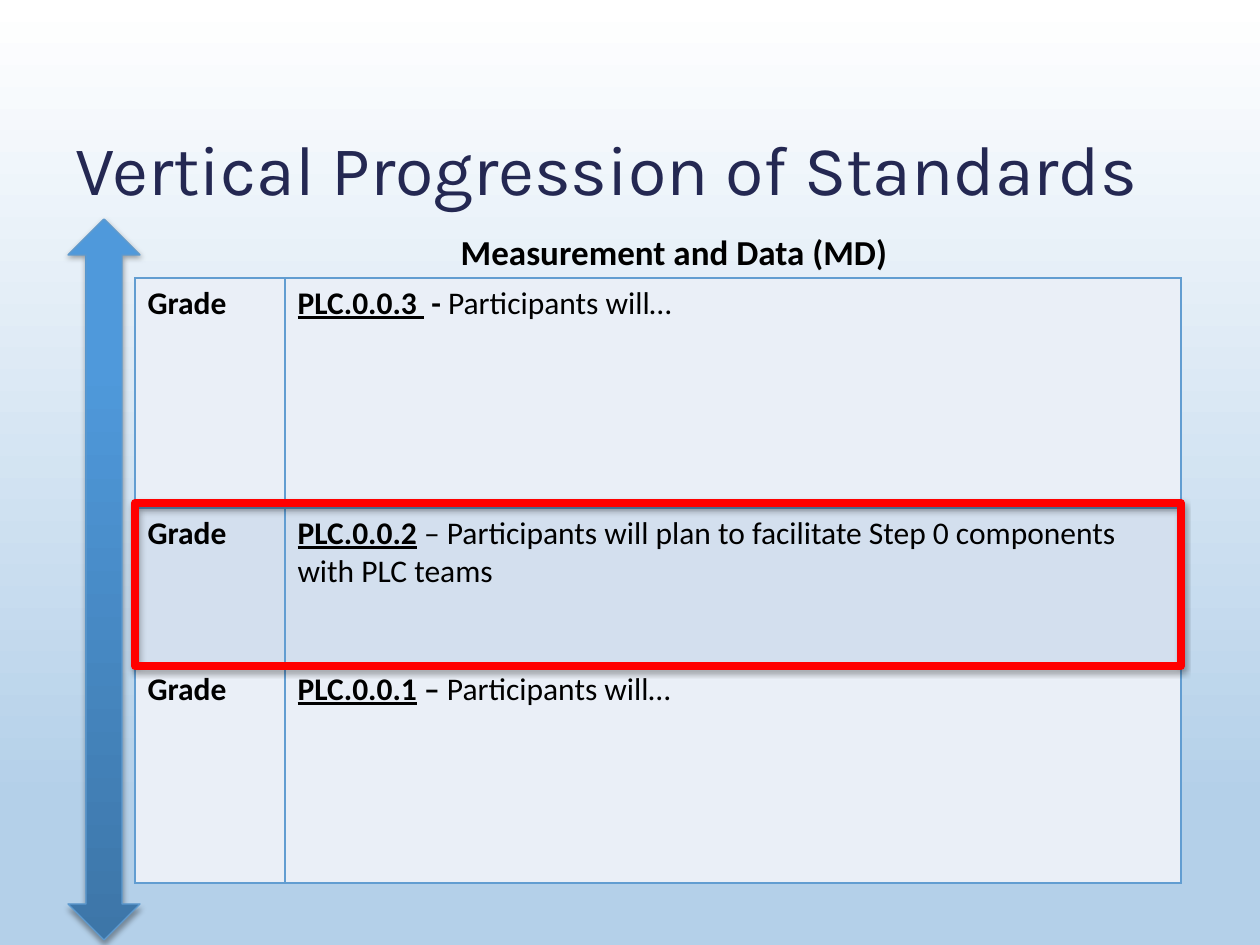
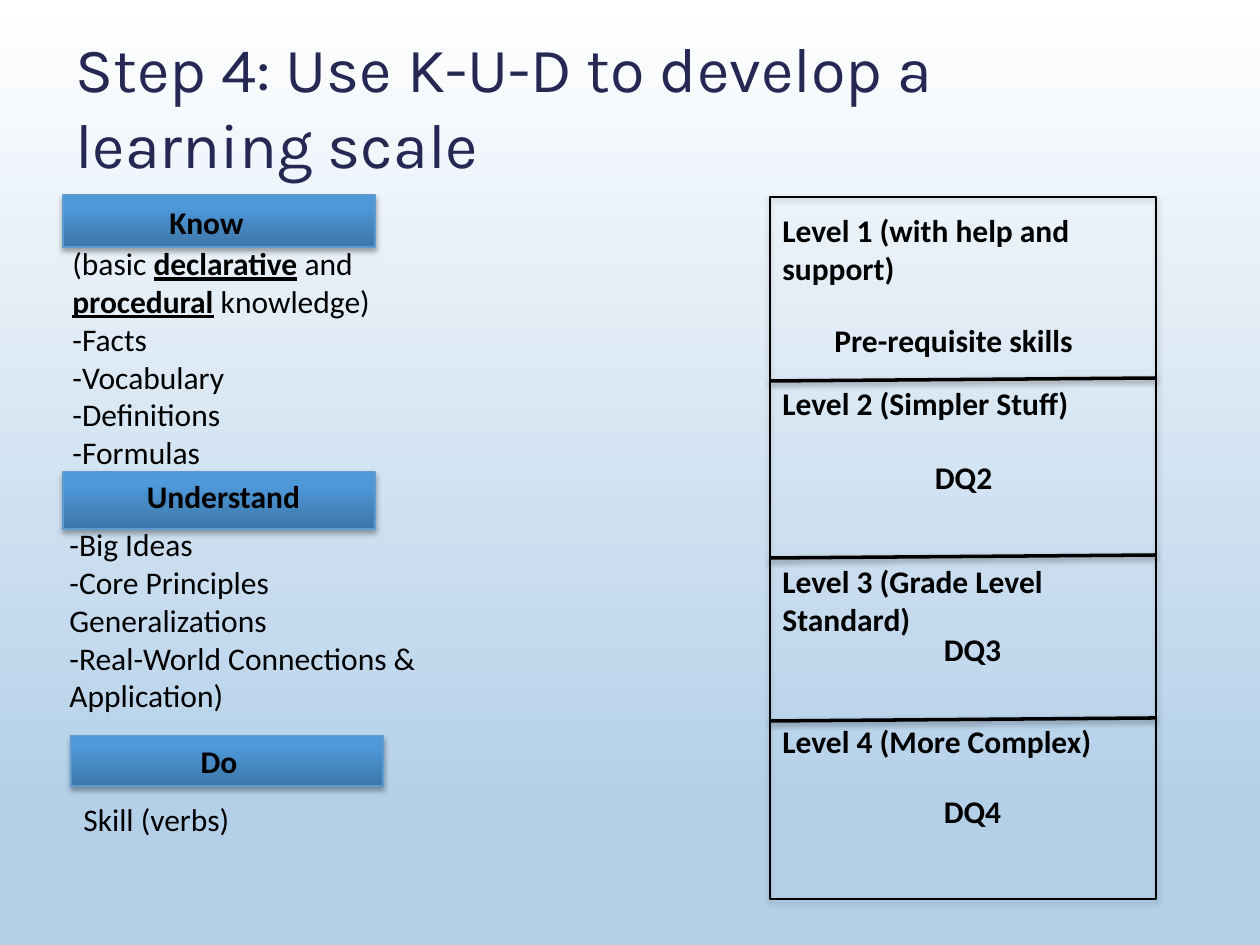
"""Build two slides on the progression of standards and on a learning scale."""
from lxml.etree import SubElement
from pptx import Presentation
from pptx.dml.color import RGBColor
from pptx.enum.shapes import MSO_CONNECTOR, MSO_SHAPE
from pptx.enum.text import MSO_ANCHOR, MSO_AUTO_SIZE, PP_ALIGN
from pptx.oxml.ns import qn
from pptx.util import Pt

PX = 914400 / 126
COLORS = {
    "sky_top": "FFFFFF", "sky_bottom": "B4D0E9", "title": "242852", "text": "000000",
    "bar_dark": "3D76A8", "bar_light": "4F99DB", "bar_line": "5D9ACF",
    "grid": "629DD1", "row_pale": "EAEFF7", "row_blue": "D3DFEE", "highlight": "FF0000",
}
TITLE_FONT, BODY_FONT = "Karla", "Calibri"

PROGRESSION = {
    "title": "Vertical Progression of Standards",
    "caption": "Measurement and Data (MD)",
    "columns": (150, 896),
    "rows": [
        (230, "row_pale", "Grade",
         [("PLC.0.0.3 ", "bu"), (" - ", "b"), ("Participants will…", "")]),
        (156, "row_blue", "Grade",
         [("PLC.0.0.2", "bu"),
          (" – Participants will plan to facilitate Step 0 components with PLC teams", "")]),
        (219, "row_pale", "Grade",
         [("PLC.0.0.1", "bu"), (" – ", "b"), ("Participants will…", "")]),
    ],
}
SCALE_TITLE = "Step 4: Use K-U-D to develop a learning scale"
KUD = [
    {"name": "Know", "bar": (63, 195, 312, 52), "label": (71, 197, 271, 50),
     "detail": (60, 238, 379, 242),
     "lines": [[("(basic ", ""), ("declarative", "bu"), (" and ", ""),
                ("procedural", "bu"), (" knowledge)", "")],
               "-Facts", "-Vocabulary", "-Definitions", "-Formulas"]},
    {"name": "Understand", "bar": (63, 472, 312, 57), "label": (88, 471, 271, 50),
     "detail": (57, 519, 387, 204),
     "lines": ["-Big Ideas", "-Core Principles Generalizations",
               "-Real-World Connections & Application)"]},
    {"name": "Do", "bar": (71, 736, 312, 50), "label": (122, 736, 194, 50),
     "detail": (71, 794, 305, 50), "lines": ["Skill (verbs)"]},
]
LEVELS_FRAME = (770, 197, 386, 702)
DIVIDERS, DIVIDER_RISE = (381, 558, 721), 3
LEVELS = [
    ("Level 1 (with help and support)", 205, 89,
     "Pre-requisite skills", (822, 315, 312, 50), PP_ALIGN.LEFT),
    ("Level 2 (Simpler Stuff)", 378, 50, "DQ2", (879, 452, 169, 50), PP_ALIGN.CENTER),
    ("Level 3 (Grade Level Standard)", 556, 89, "DQ3", (888, 624, 169, 50), PP_ALIGN.CENTER),
    ("Level 4 (More Complex)", 716, 50, "DQ4", (888, 786, 169, 50), PP_ALIGN.CENTER),
]


def emu(*lengths):
    return [round(length * PX) for length in lengths]


def rgb(name):
    return RGBColor.from_string(COLORS[name])


def fill_gradient(fill, angle, stops):
    fill.gradient()
    fill.gradient_angle = angle
    for stop, (position, color) in zip(fill.gradient_stops, stops):
        stop.position = position
        stop.color.rgb = rgb(color)


def style_line(line, color, width):
    line.color.rgb = rgb(color)
    line.width = Pt(width)


def add_shadow(part, alpha=35, distance=23000):
    properties = part._element.spPr
    effects = properties.find(qn("a:effectLst"))
    if effects is None:
        effects = SubElement(properties, qn("a:effectLst"))
    shadow = SubElement(effects, qn("a:outerShdw"), blurRad="40000", dist=str(distance),
                        dir="5400000", rotWithShape="0")
    color = SubElement(shadow, qn("a:srgbClr"), val=COLORS["text"])
    SubElement(color, qn("a:alpha"), val=str(alpha * 1000))


def add_outline(slide, box, color, width, kind=MSO_SHAPE.RECTANGLE):
    outline = slide.shapes.add_shape(kind, *emu(*box))
    outline.fill.background()
    style_line(outline.line, color, width)
    outline.shadow.inherit = False
    add_shadow(outline)
    return outline


def add_bar(slide, box, kind=MSO_SHAPE.RECTANGLE):
    bar = add_outline(slide, box, "bar_line", 0.75, kind)
    fill_gradient(bar.fill, 90, [(0, "bar_dark"), (0.8, "bar_light")])


def write(frame, lines, size=18, bold=None, align=PP_ALIGN.LEFT, font=BODY_FONT, color="text"):
    frame.word_wrap = True
    for index, line in enumerate(lines):
        paragraph = frame.add_paragraph() if index else frame.paragraphs[0]
        paragraph.alignment = align
        paragraph.font.size = Pt(size)
        paragraph.font.name = font
        paragraph.font.bold = bold
        paragraph.font.color.rgb = rgb(color)
        for text, style in [(line, "")] if isinstance(line, str) else line:
            run = paragraph.add_run()
            run.text = text
            if "b" in style:
                run.font.bold = True
            if "u" in style:
                run.font.underline = True


def add_text(slide, box, lines, **style):
    frame = slide.shapes.add_textbox(*emu(*box)).text_frame
    write(frame, lines, **style)
    frame.auto_size = MSO_AUTO_SIZE.SHAPE_TO_FIT_TEXT


def add_slide(deck, title, top, size):
    slide = deck.slides.add_slide(deck.slide_layouts[6])
    fill_gradient(slide.background.fill, 270, [(0, "sky_top"), (0.85, "sky_bottom")])
    frame = slide.shapes.add_textbox(*emu(63, top, 1134, 158)).text_frame
    frame.vertical_anchor = MSO_ANCHOR.BOTTOM
    write(frame, [title], size=size, font=TITLE_FONT, color="title")
    return slide


def style_cell(cell, color):
    properties = cell._tc.get_or_add_tcPr()
    for side in ("lnL", "lnR", "lnT", "lnB"):
        border = SubElement(properties, qn(f"a:{side}"), w=str(Pt(1)))
        fill = SubElement(border, qn("a:solidFill"))
        SubElement(fill, qn("a:srgbClr"), val=COLORS["grid"])
    cell.fill.solid()
    cell.fill.fore_color.rgb = rgb(color)


def add_standards(slide, left, top):
    columns, rows = PROGRESSION["columns"], PROGRESSION["rows"]
    box = (left, top, sum(columns), sum(row[0] for row in rows))
    standards = slide.shapes.add_table(len(rows), len(columns), *emu(*box)).table
    standards.first_row = standards.horz_banding = False
    for column, width in zip(standards.columns, emu(*columns)):
        column.width = width
    for index, (height, color, grade, standard) in enumerate(rows):
        standards.rows[index].height = emu(height)[0]
        for cell, line, bold in zip(standards.rows[index].cells, (grade, standard), (True, None)):
            style_cell(cell, color)
            write(cell.text_frame, [line], bold=bold)


def build_progression(deck):
    slide = add_slide(deck, PROGRESSION["title"], 58, 40)
    add_standards(slide, 135, 278)
    add_outline(slide, (135, 503, 1046, 163), "highlight", 4.5)
    add_text(slide, (397, 224, 554, 55), [PROGRESSION["caption"]],
             size=20, bold=True, align=PP_ALIGN.CENTER)
    add_bar(slide, (68, 219, 72, 721), MSO_SHAPE.UP_DOWN_ARROW)


def build_scale(deck):
    slide = add_slide(deck, SCALE_TITLE, 29, 36)
    for part in KUD:
        add_bar(slide, part["bar"])
        add_text(slide, part["label"], [part["name"]], bold=True, align=PP_ALIGN.CENTER)
    for part in KUD:
        add_text(slide, part["detail"], part["lines"])

    add_outline(slide, LEVELS_FRAME, "text", 0.75)
    left, _, width, _ = LEVELS_FRAME
    for y in DIVIDERS:
        divider = slide.shapes.add_connector(
            MSO_CONNECTOR.STRAIGHT, *emu(left, y, left + width, y - DIVIDER_RISE))
        style_line(divider.line, "text", 2)
        add_shadow(divider, 38, 20000)
    for heading, top, height, note, note_box, align in LEVELS:
        add_text(slide, (left, top, width, height), [heading], bold=True)
        add_text(slide, note_box, [note], bold=True, align=align)


def main():
    deck = Presentation()
    deck.slide_width, deck.slide_height = emu(1260, 945)
    build_progression(deck)
    build_scale(deck)
    deck.save("out.pptx")


if __name__ == "__main__":
    main()
